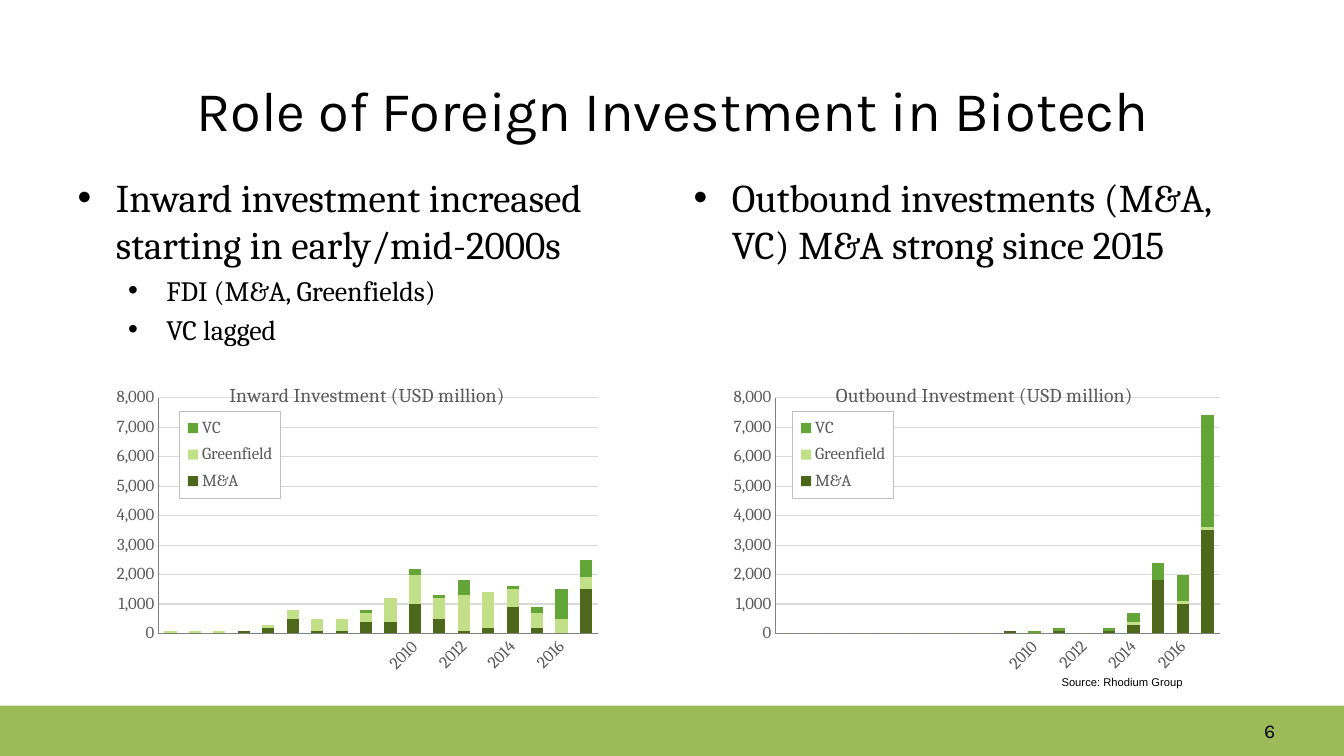
from lxml import etree
from pptx import Presentation
from pptx.chart.data import CategoryChartData as Data
from pptx.dml.color import RGBColor
from pptx.enum.chart import XL_CHART_TYPE as Kind, XL_LEGEND_POSITION as Side, XL_TICK_MARK as Tick
from pptx.enum.shapes import MSO_SHAPE as Shape
from pptx.enum.text import MSO_ANCHOR as Anchor, MSO_AUTO_SIZE as Fit, PP_ALIGN as Align
from pptx.oxml import parse_xml
from pptx.oxml.ns import nsdecls, qn
from pptx.util import Inches, Pt


def style(font, color, **look):
    font.color.rgb = RGBColor.from_string(color)
    for key, value in look.items():
        setattr(font, key, value)


def place(item, index, **spots):
    """Give a chart part a manual layout, in fractions of the chart."""
    for old in item.findall(qn("c:layout")):
        item.remove(old)
    layout = parse_xml(f"<c:layout {nsdecls('c')}><c:manualLayout/></c:layout>")
    for key, value in spots.items():
        etree.SubElement(layout[0], qn("c:" + key)).set("val", str(value))
    item.insert(index, layout)


deck = Presentation()
deck.slide_width, deck.slide_height = Inches(13.33), Inches(7.5)
slide = deck.slides.add_slide(deck.slide_layouts[3])
shapes = slide.shapes

band = shapes.add_shape(Shape.RECTANGLE, 0, Inches(7), Inches(13.33), Inches(0.5))
band.shadow.inherit = False
band.fill.solid()
band.fill.fore_color.rgb = RGBColor.from_string("9BBB59")
band.line.fill.background()

# Title and bullet lists
title, left, right = slide.placeholders
title.left, title.top, title.width, title.height = map(Inches, (0.67, 0.58, 12, 1))
frame = title.text_frame
frame.text = "Role of Foreign Investment in Biotech"
frame.vertical_anchor, frame.auto_size = Anchor.MIDDLE, Fit.NONE
frame.paragraphs[0].alignment = Align.CENTER
style(frame.paragraphs[0].font, "000000", name="Karla", size=Pt(40))

lists = [
    (left, 0.67, [("Inward investment increased starting in early/mid-2000s", 0),
                  ("FDI (M&A, Greenfields)", 1), ("VC lagged", 1)]),
    (right, 6.78, [("Outbound investments (M&A, VC) M&A strong since 2015", 0)]),
]
levels = [(0.38, 28), (0.88, 20)]
for body, x, lines in lists:
    body.left, body.top, body.width, body.height = map(Inches, (x, 1.67, 5.89, 5.17))
    frame = body.text_frame
    frame.text = "\n".join(text for text, level in lines)
    frame.auto_size = Fit.NONE
    for para, (text, level) in zip(frame.paragraphs, lines):
        indent, size = levels[level]
        para.level = level
        props = para._p.get_or_add_pPr()
        props.set("marL", str(Inches(indent)))
        props.set("indent", str(Inches(-0.38)))
        etree.SubElement(props, qn("a:buFont")).set("typeface", "Arial")
        etree.SubElement(props, qn("a:buChar")).set("char", "•")
        style(para.font, "000000", name="Cambria", size=Pt(size))
    frame.paragraphs[0].space_before = Pt(0)

# Charts
colors = {"M&A": "4D671B", "Greenfield": "C2E088", "VC": "63A537"}
charts = [
    ("Inward Investment (USD million)", 1.11, 0.873, 0.226, 0.135, [
        [0, 0, 0, 100, 200, 500, 100, 100, 400, 400, 1000, 500, 100, 200, 900, 200, 0, 1500],
        [100, 100, 100, 0, 100, 300, 400, 400, 300, 800, 1000, 700, 1200, 1200, 600, 500, 500, 400],
        [0, 0, 0, 0, 0, 0, 0, 0, 100, 0, 200, 100, 500, 0, 100, 200, 1000, 600]]),
    ("Outbound Investment (USD million)", 7.23, 0.882, 0.205, 0.127, [
        [0] * 9 + [100, 0, 100, 0, 100, 300, 1800, 1000, 3500],
        [0] * 14 + [100, 0, 100, 100],
        [0] * 10 + [100, 100, 0, 100, 300, 600, 900, 3800]]),
]
gray = {"color": "595959", "name": "Cambria", "size": Pt(12), "bold": False}
for name, x, width, head, key, rows in charts:
    data = Data(number_format="#,##0")
    data.categories = [str(year) for year in range(2000, 2018)]
    for label, row in zip(colors, rows):
        data.add_series(label, row)
    chart = shapes.add_chart(Kind.COLUMN_STACKED, Inches(x), Inches(3.58),
                             Inches(5), Inches(3.15), data).chart
    style(chart.font, "000000", name="Cambria", size=Pt(12))

    chart.has_title = True
    text = chart.chart_title.text_frame
    text.text = name
    style(text.paragraphs[0].runs[0].font, **{**gray, "size": Pt(14)})
    place(chart.chart_title._element, 1, xMode="edge", yMode="edge", x=head, y=0.057)

    plot = chart.plots[0]
    plot.gap_width, plot.overlap, plot.vary_by_categories = 100, 100, False
    for series, color in zip(plot.series, colors.values()):
        series.format.fill.solid()
        series.format.fill.fore_color.rgb = RGBColor.from_string(color)
        series.invert_if_negative = False
    place(chart._chartSpace.chart.plotArea, 0, layoutTarget="inner", xMode="edge",
          yMode="edge", x=0.092, y=0.116, w=width, h=0.743)

    years, money = chart.category_axis, chart.value_axis
    for axis in (years, money):
        axis.major_tick_mark = axis.minor_tick_mark = Tick.NONE
        style(axis.tick_labels.font, **gray)
        style(axis.format.line, "808080", width=Pt(0.75))
    years._element.find(qn("c:txPr")).find(qn("a:bodyPr")).set("rot", "-2700000")
    skip = parse_xml(f'<c:tickLblSkip {nsdecls("c")} val="2"/>')
    years._element.find(qn("c:noMultiLvlLbl")).addprevious(skip)
    money.minimum_scale, money.maximum_scale, money.major_unit = 0, 8000, 1000
    money.tick_labels.number_format = "#,##0"
    money.tick_labels.number_format_is_linked = False
    style(money.major_gridlines.format.line, "D9D9D9", width=Pt(0.75))

    chart.has_legend = True
    legend = chart.legend
    legend.position, legend.include_in_layout = Side.RIGHT, True
    style(legend.font, **gray)
    place(legend._element, 1, xMode="edge", yMode="edge", x=key, y=0.158, w=0.2, h=0.275)
    legend._element.find(qn("c:txPr")).addprevious(parse_xml(
        f'<c:spPr {nsdecls("c", "a")}><a:solidFill><a:srgbClr val="FFFFFF"/></a:solidFill>'
        '<a:ln w="9525"><a:solidFill><a:srgbClr val="BFBFBF"/></a:solidFill></a:ln></c:spPr>'))

# Page number and source
notes = [
    ("6", (12.44, 7.05, 0.67, 0.4), True, Anchor.MIDDLE, "Karla", 14),
    ("Source: Rhodium Group", (10.43, 6.65, 1.42, 0.24), False, Anchor.TOP, "Arial", 8),
]
for text, spot, wrap, anchor, face, size in notes:
    frame = shapes.add_textbox(*map(Inches, spot)).text_frame
    frame.text = text
    frame.word_wrap, frame.vertical_anchor = wrap, anchor
    style(frame.paragraphs[0].font, "000000", name=face, size=Pt(size))

deck.save("out.pptx")
